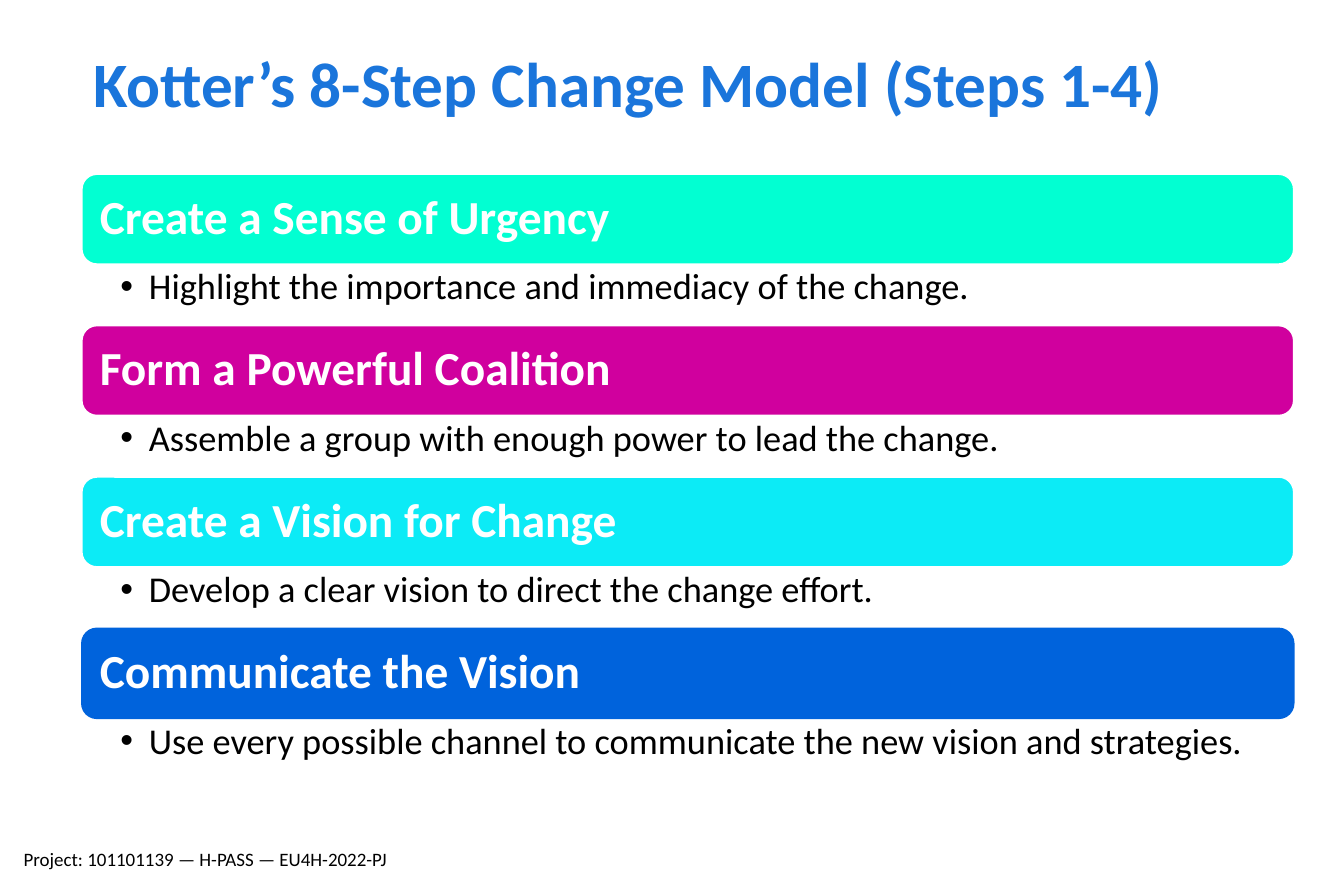
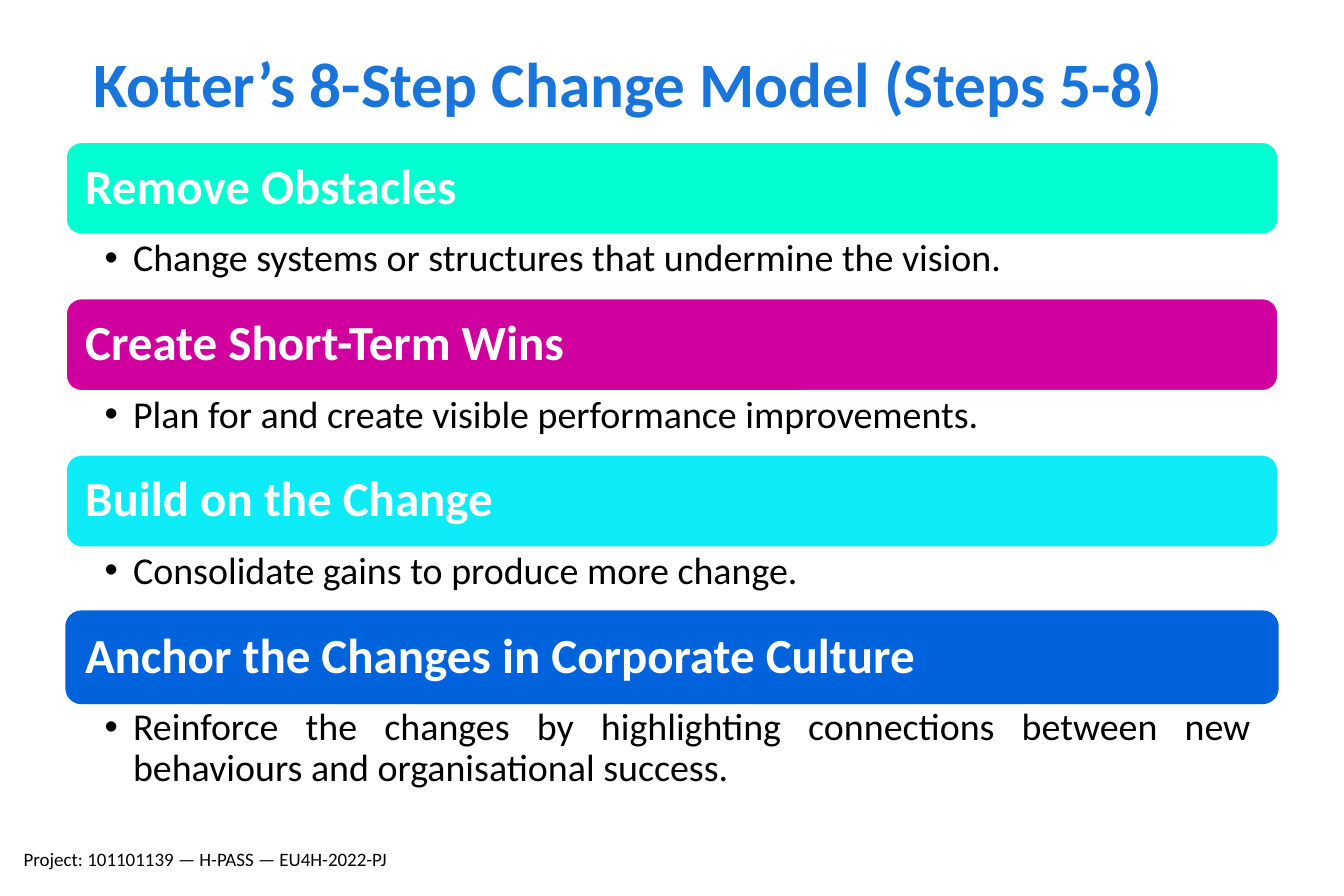
from pptx import Presentation
from pptx.dml.color import RGBColor
from pptx.enum.shapes import MSO_SHAPE
from pptx.enum.text import MSO_ANCHOR, PP_ALIGN
from pptx.util import Pt
from lxml.etree import SubElement
from pptx.oxml.ns import qn

# Shared style
FONT = "Calibri"
TITLE, WHITE, BLACK = "1A75DB", "FFFFFF", "000000"
BARS = [("02FFD2", WHITE), ("D0009E", WHITE), ("0CEBF6", WHITE), ("0063DC", "0063DC")]
WIDTH = 766.8
FOOTER = "Project: 101101139 — H-PASS — EU4H-2022-PJ"


def rgb(code):
    return RGBColor.from_string(code)


def write(sp, text, size, color, bold=False, align=PP_ALIGN.LEFT, spacing=0.9,
          insets=(7.2, 3.6, 7.2, 3.6), bullet=False):
    tf = sp.text_frame
    tf.word_wrap = True
    tf.margin_left, tf.margin_top, tf.margin_right, tf.margin_bottom = map(Pt, insets)
    p = tf.paragraphs[0]
    p.alignment, p.line_spacing = align, spacing
    if bullet:
        pPr = p._p.get_or_add_pPr()
        pPr.set("marL", str(Pt(18)))
        pPr.set("indent", str(-Pt(18)))
        SubElement(pPr, qn("a:buFont"), typeface="Arial")
        SubElement(pPr, qn("a:buChar"), char="•")
    r = p.add_run()
    r.text = text
    r.font.name, r.font.size, r.font.bold = FONT, Pt(size), bold
    r.font.color.rgb = rgb(color)


# Slide content: title, layout of the list, steps
slides = [
    dict(title="Kotter’s 8-Step Change Model (Steps 1-4)",
         left=51.8, top=110.2, bar=56.9, body=38.9, last=38.9,
         head_size=30, body_size=23, pad=8.6,
         steps=[
             ("Create a Sense of Urgency",
              "Highlight the importance and immediacy of the change."),
             ("Form a Powerful Coalition",
              "Assemble a group with enough power to lead the change."),
             ("Create a Vision for Change",
              "Develop a clear vision to direct the change effort."),
             ("Communicate the Vision",
              "Use every possible channel to communicate the new vision and strategies."),
         ]),
    dict(title="Kotter’s 8-Step Change Model (Steps 5-8)",
         left=41.8, top=90, bar=58.4, body=40.5, last=59,
         head_size=31, body_size=24, pad=9.2,
         steps=[
             ("Remove Obstacles",
              "Change systems or structures that undermine the vision."),
             ("Create Short-Term Wins",
              "Plan for and create visible performance improvements."),
             ("Build on the Change",
              "Consolidate gains to produce more change."),
             ("Anchor the Changes in Corporate Culture",
              "Reinforce the changes by highlighting connections between new "
              "behaviours and organisational success."),
         ]),
]

prs = Presentation()
prs.slide_width, prs.slide_height = Pt(850.4), Pt(566.9)

for d in slides:
    s = prs.slides.add_slide(prs.slide_layouts[6])

    # Title
    sp = s.shapes.add_textbox(Pt(51.8), Pt(30.2), Pt(718.6), Pt(40.3))
    write(sp, d["title"], 40, TITLE, bold=True, align=PP_ALIGN.JUSTIFY)

    # Steps: a coloured bar with a bullet below
    left, bar = d["left"], d["bar"]
    for i, ((head, body), (fill, line)) in enumerate(zip(d["steps"], BARS)):
        top = d["top"] + i * (bar + d["body"])
        sp = s.shapes.add_shape(MSO_SHAPE.ROUNDED_RECTANGLE,
                                Pt(left), Pt(top), Pt(WIDTH), Pt(bar))
        sp.shadow.inherit = False
        sp.fill.solid()
        sp.fill.fore_color.rgb = rgb(fill)
        sp.line.color.rgb = rgb(line)
        sp.line.width = Pt(1)
        sp.text_frame.vertical_anchor = MSO_ANCHOR.MIDDLE
        write(sp, head, d["head_size"], WHITE, bold=True, insets=[d["pad"]] * 4)

        height = d["last"] if i == len(BARS) - 1 else d["body"]
        sp = s.shapes.add_textbox(Pt(left), Pt(top + bar), Pt(WIDTH), Pt(height))
        write(sp, body, d["body_size"], BLACK, align=PP_ALIGN.JUSTIFY,
              insets=(24.4, 2.8, 17, 2.8), bullet=True)

    # Footer
    sp = s.shapes.add_textbox(Pt(7.9), Pt(532.8), Pt(261.4), Pt(19.4))
    write(sp, FOOTER, 12, BLACK, spacing=1.0)

prs.save("out.pptx")
